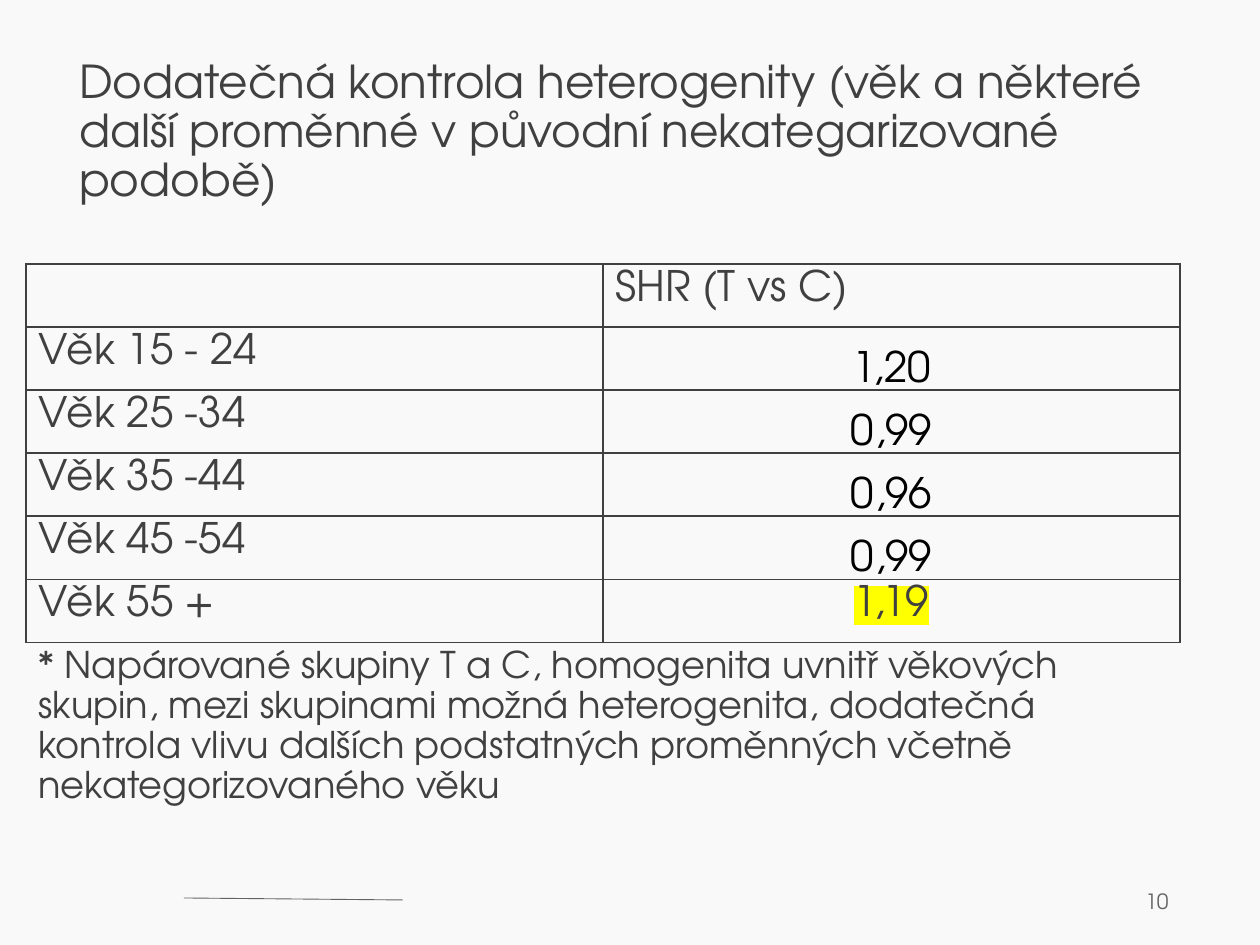
import pptx
import pptx.util
import pptx.dml.color
import pptx.enum.shapes
import pptx.enum.text
import pptx.oxml
import pptx.oxml.ns
from lxml import etree

# Content
TITLE = ("Dodatečná kontrola heterogenity (věk a některé další proměnné "
         "v původní nekategarizované podobě)")
NOTE = ("* Napárované skupiny T a C, homogenita uvnitř věkových skupin, mezi "
        "skupinami možná heterogenita, dodatečná kontrola vlivu dalších "
        "podstatných proměnných včetně nekategorizovaného věku")
PAGE_NUMBER = "10"
HEADER = ("", "SHR (T vs C)")
RATIOS = [
    ("Věk 15 - 24", "1,20"),
    ("Věk 25 -34", "0,99"),
    ("Věk 35 -44", "0,96"),
    ("Věk 45 -54", "0,99"),
    ("Věk 55 +", "1,19"),
]

# Style and geometry, in px at 126 px to the inch
FONT = "TeX Gyre Adventor"
DARK, GREY, BLACK, YELLOW, PAPER = "404040", "636363", "000000", "FFFF00", "F9F9F9"
TABLE_LEFT, TABLE_TOP, COLUMN_WIDTH, ROW_HEIGHT = 26, 264, 577, 51
ALIGN = pptx.enum.text.PP_ALIGN
ANCHOR = pptx.enum.text.MSO_ANCHOR


def px(length):
    return pptx.util.Emu(round(length * 914400 / 126))


def rgb(value):
    return pptx.dml.color.RGBColor.from_string(value)


def write(paragraph, text, size, color, align=ALIGN.LEFT, spacing=None):
    paragraph.text = text
    paragraph.alignment = align
    paragraph.line_spacing = spacing
    paragraph.font.name = FONT
    paragraph.font.size = pptx.util.Pt(size)
    paragraph.font.color.rgb = rgb(color)


def add_text(slide, box, text, size, color, inset=None, anchor=ANCHOR.TOP, **style):
    frame = slide.shapes.add_textbox(*map(px, box)).text_frame
    frame.word_wrap = True
    frame.vertical_anchor = anchor
    if inset is not None:
        frame.margin_left = frame.margin_right = px(inset)
        frame.margin_top = frame.margin_bottom = px(inset)
    write(frame.paragraphs[0], text, size, color, **style)


def add_borders(cell, color, width):
    properties = cell._tc.get_or_add_tcPr()
    for position, side in enumerate(("lnL", "lnR", "lnT", "lnB")):
        properties.insert(position, pptx.oxml.parse_xml(
            f'<a:{side} {pptx.oxml.ns.nsdecls("a")} w="{pptx.util.Pt(width)}">'
            f'<a:solidFill><a:srgbClr val="{color}"/></a:solidFill></a:{side}>'))


def highlight(run, color):
    mark = etree.SubElement(run.font._element, pptx.oxml.ns.qn("a:highlight"))
    etree.SubElement(mark, pptx.oxml.ns.qn("a:srgbClr"), val=color)


def add_ratio_table(slide):
    rows = [HEADER, *RATIOS]
    columns = len(HEADER)
    table = slide.shapes.add_table(
        len(rows), columns, px(TABLE_LEFT), px(TABLE_TOP),
        px(columns * COLUMN_WIDTH), px(len(rows) * ROW_HEIGHT)).table
    table.first_row = table.horz_banding = False
    last = len(rows) - 1
    for row, texts in enumerate(rows):
        for column, text in enumerate(texts):
            cell = table.cell(row, column)
            cell.fill.background()
            add_borders(cell, DARK, 1)
            paragraph = cell.text_frame.paragraphs[0]
            is_value = row > 0 and column == 1
            if is_value and row < last:
                cell.vertical_anchor = ANCHOR.BOTTOM
                cell.margin_left = cell.margin_right = px(6)
                cell.margin_top = cell.margin_bottom = 0
                write(paragraph, text, 24, BLACK, ALIGN.CENTER, 1.1)
                paragraph.space_after = pptx.util.Pt(12)
            else:
                write(paragraph, text, 24, DARK, ALIGN.CENTER if is_value else ALIGN.LEFT)
    highlight(table.cell(last, 1).text_frame.paragraphs[0].runs[0], YELLOW)


def main():
    presentation = pptx.Presentation()
    presentation.slide_width, presentation.slide_height = px(1260), px(945)
    slide = presentation.slides.add_slide(presentation.slide_layouts[6])
    slide.background.fill.solid()
    slide.background.fill.fore_color.rgb = rgb(PAPER)

    # Footer line and page number
    line = slide.shapes.add_connector(
        pptx.enum.shapes.MSO_CONNECTOR.STRAIGHT, px(184), px(898), px(403), px(900))
    line.line.color.rgb = rgb(GREY)
    line.line.width = pptx.util.Pt(0.5)
    etree.SubElement(line._element.spPr, pptx.oxml.ns.qn("a:effectLst"))
    add_text(slide, (897, 876, 284, 50), PAGE_NUMBER, 12, GREY,
             anchor=ANCHOR.MIDDLE, align=ALIGN.RIGHT)

    # Title, table and footnote
    add_text(slide, (79, 59, 1101, 115), TITLE, 25.9, DARK, inset=0, spacing=0.9)
    add_ratio_table(slide)
    add_text(slide, (26, 641, 1101, 144), NOTE, 21, DARK, spacing=0.9)

    presentation.save("out.pptx")


if __name__ == "__main__":
    main()
